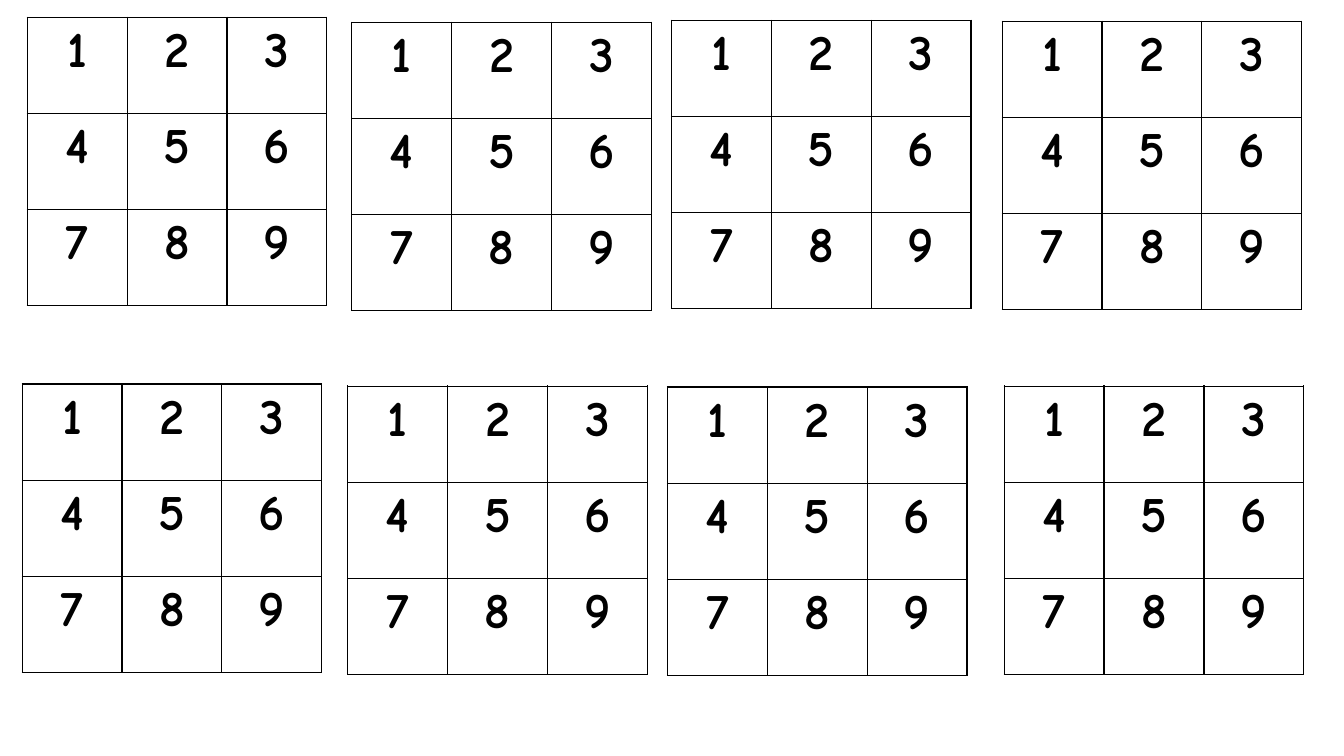
"""Build a slide of eight number grids, each a three by three table."""
from dataclasses import dataclass

from lxml.etree import SubElement
from pptx import Presentation
from pptx.dml.color import RGBColor
from pptx.enum.text import MSO_ANCHOR as Anchor, PP_ALIGN as Align
from pptx.oxml.ns import qn
from pptx.util import Inches, Pt

BLACK = RGBColor(0x00, 0x00, 0x00)
SIDE = 3
CELL_WIDTH = 7.43
CELL_HEIGHT = 12.71
DIGIT_FORMAT = {"name": "Comic Neue", "size": Pt(36), "bold": True}
PLAIN_TABLE = {"first_row": False, "horz_banding": False}


@dataclass(frozen=True)
class NumberGrid:
    """Top left corner of a grid, in percent of the slide's size."""
    left: float
    top: float


NUMBER_GRIDS = (
    NumberGrid(2.03, 2.27),
    NumberGrid(26.18, 2.93),
    NumberGrid(49.96, 2.67),
    NumberGrid(74.57, 2.8),
    NumberGrid(1.65, 50.8),
    NumberGrid(25.88, 51.07),
    NumberGrid(49.66, 51.2),
    NumberGrid(74.72, 51.07),
)


def set_formats(target: object, formats: dict) -> None:
    """Set each named format value on the target."""
    for name, value in formats.items():
        setattr(target, name, value)


def add_borders(cell, color: RGBColor) -> None:
    """Draw a one point line on all four sides of a cell."""
    properties = cell._tc.get_or_add_tcPr()
    for edge in ("a:lnL", "a:lnR", "a:lnT", "a:lnB"):
        line = SubElement(properties, qn(edge), w=str(Pt(1)))
        fill = SubElement(line, qn("a:solidFill"))
        SubElement(fill, qn("a:srgbClr"), val=str(color))


def fill_cell(cell, number: int) -> None:
    """Write a centred number in a bordered, unfilled cell."""
    add_borders(cell, BLACK)
    cell.fill.background()
    cell.vertical_anchor = Anchor.TOP
    para = cell.text_frame.paragraphs[0]
    para.alignment = Align.CENTER
    span = para.add_run()
    span.text = str(number)
    set_formats(span.font, DIGIT_FORMAT)
    span.font.color.rgb = BLACK


def draw_grid(page, grid: NumberGrid, across: float, down: float) -> None:
    """Draw one table, given the size of one percent across and down."""
    box = page.shapes.add_table(
        SIDE, SIDE,
        round(grid.left * across), round(grid.top * down),
        round(SIDE * CELL_WIDTH * across), round(SIDE * CELL_HEIGHT * down),
    )
    set_formats(box.table, PLAIN_TABLE)
    for number, cell in enumerate(box.table.iter_cells(), start=1):
        fill_cell(cell, number)


def main() -> None:
    """Build and save the deck."""
    deck = Presentation()
    set_formats(deck, {"slide_width": Inches(13.33), "slide_height": Inches(7.5)})
    page = deck.slides.add_slide(deck.slide_layouts[6])
    for grid in NUMBER_GRIDS:
        draw_grid(page, grid, deck.slide_width / 100, deck.slide_height / 100)
    deck.save("out.pptx")


if __name__ == "__main__":
    main()
